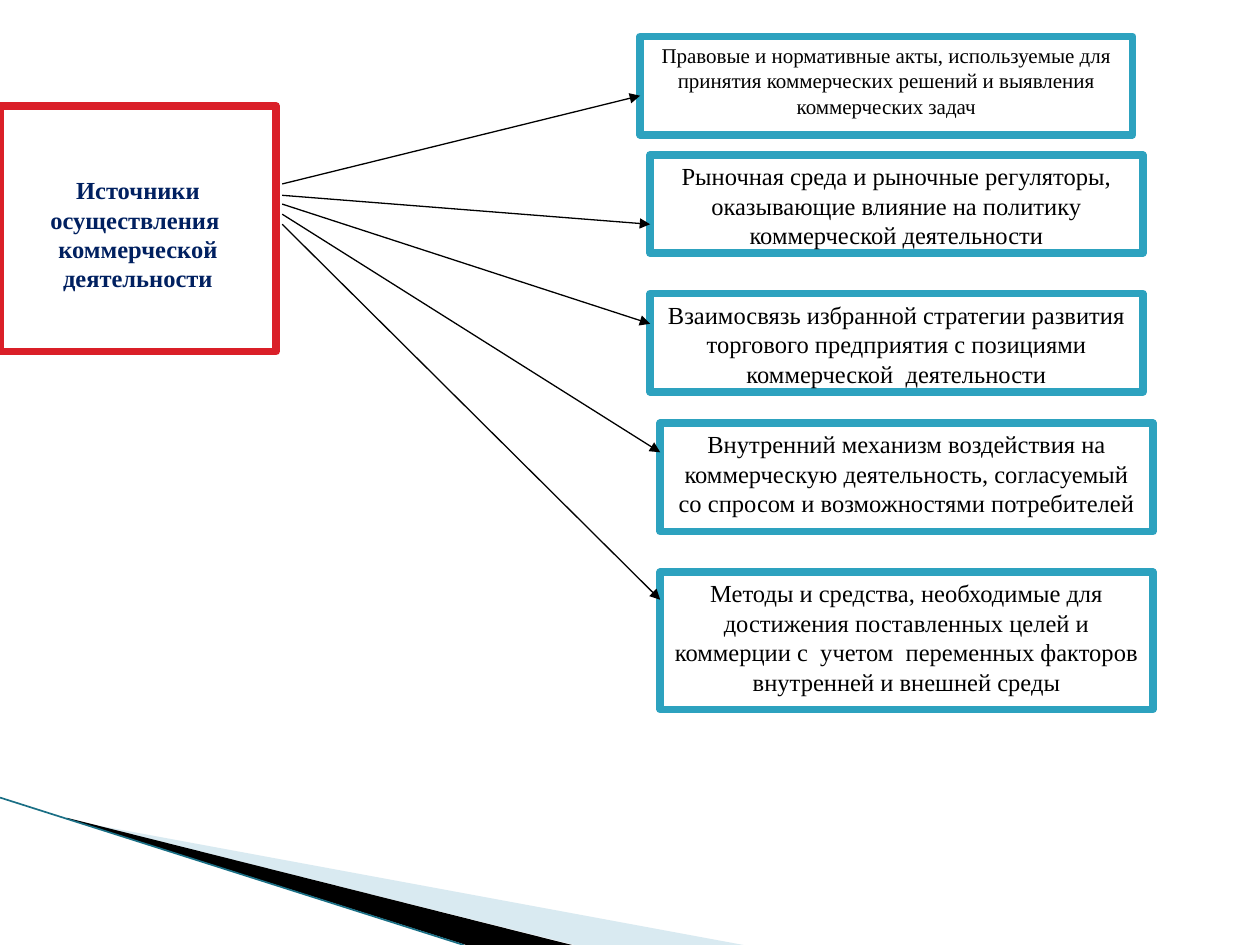
from dataclasses import dataclass
from lxml.etree import SubElement
from pptx import Presentation
from pptx.dml.color import RGBColor
from pptx.enum.shapes import MSO_CONNECTOR, MSO_SHAPE
from pptx.enum.text import MSO_ANCHOR, PP_ALIGN
from pptx.oxml.ns import qn
from pptx.util import Inches, Pt


@dataclass(frozen=True)
class Theme:
    font: str = "Times New Roman"
    paper: str = "FFFFFF"
    ink: str = "000000"
    navy: str = "002060"
    red: str = "DA1F28"
    teal: str = "2DA2BF"
    pale: str = "A0CBDC"
    edge: str = "1A6F85"
    small: int = 12
    base: int = 14
    frame: float = 4.33
    thin: float = 0.75
    rim: float = 0.95


def color(code):
    return RGBColor.from_string(code)


def write(frame, text, *, font, size, ink, bold=False):
    frame.word_wrap = True
    frame.vertical_anchor = MSO_ANCHOR.TOP
    for index, line in enumerate(text.split("\n")):
        para = frame.paragraphs[0] if index == 0 else frame.add_paragraph()
        para.alignment = PP_ALIGN.CENTER
        run = para.add_run()
        run.text = line
        run.font.name = font
        run.font.size = Pt(size)
        run.font.bold = bold
        run.font.color.rgb = color(ink)


class Board:
    cols, rows = 100, 75

    def __init__(self, deck, theme):
        self.theme = theme
        self.wide = deck.slide_width / self.cols
        self.high = deck.slide_height / self.rows
        self.shapes = deck.slides.add_slide(deck.slide_layouts[6]).shapes

    def spot(self, col, row):
        return round(col * self.wide), round(row * self.high)

    def box(self, text, col, row, width, height, line, inset=0.5, **style):
        shape = self.shapes.add_shape(
            MSO_SHAPE.RECTANGLE, *self.spot(col, row), *self.spot(width, height))
        shape.shadow.inherit = False
        shape.fill.solid()
        shape.fill.fore_color.rgb = color(self.theme.paper)
        shape.line.color.rgb = color(line)
        shape.line.width = Pt(self.theme.frame)
        shape.text_frame.margin_top = round(inset * self.high)
        write(shape.text_frame, text, font=self.theme.font, **style)

    def line(self, start, end, ink, width, arrow=False):
        link = self.shapes.add_connector(
            MSO_CONNECTOR.STRAIGHT, *self.spot(*start), *self.spot(*end))
        link.line.color.rgb = color(ink)
        link.line.width = Pt(width)
        if arrow:
            SubElement(link.line._get_or_add_ln(), qn("a:tailEnd"), type="triangle")
        SubElement(link._element.spPr, qn("a:effectLst"))

    def wedge(self, points, fill, alpha=100):
        first, *rest = [self.spot(*point) for point in points]
        pen = self.shapes.build_freeform(*first)
        pen.add_line_segments(rest, close=True)
        shape = pen.convert_to_shape()
        shape.shadow.inherit = False
        shape.line.fill.background()
        shape.fill.solid()
        shape.fill.fore_color.rgb = color(fill)
        if alpha < 100:
            tint = shape.fill._xPr.find(qn("a:solidFill"))[0]
            SubElement(tint, qn("a:alpha"), val=str(alpha * 1000))


def main():
    theme = Theme()
    deck = Presentation()
    deck.slide_width, deck.slide_height = Inches(10), Inches(7.5)
    board = Board(deck, theme)

    board.wedge([(5.5, 65.1), (59, 75), (45.6, 75), (5.5, 65)], theme.pale, 40)
    board.wedge([(5.3, 64.9), (45.4, 75), (37, 75), (5.4, 65)], theme.ink)
    board.line((0, 63.3), (36.8, 75), theme.edge, theme.rim)

    board.box("Источники\nосуществления  коммерческой деятельности",
              0, 8.4, 21.9, 19.5, theme.red, inset=5.5,
              size=theme.base, ink=theme.navy, bold=True)

    sources = [
        ("Правовые и нормативные акты, используемые для принятия "
         "коммерческих решений и выявления коммерческих задач",
         50.8, 2.9, 7.8, theme.small, 14.6, 7.6),
        ("Рыночная среда и рыночные регуляторы, оказывающие влияние "
         "на политику коммерческой деятельности",
         51.6, 12.3, 7.8, theme.base, 15.5, 17.8),
        ("Взаимосвязь избранной стратегии развития торгового предприятия "
         "с позициями коммерческой  деятельности",
         51.6, 23.3, 7.8, theme.base, 16.2, 25.7),
        ("Внутренний механизм воздействия на коммерческую деятельность, "
         "согласуемый со спросом и возможностями потребителей",
         52.4, 33.6, 8.6, theme.base, 17, 35.9),
        ("Методы и средства, необходимые для достижения поставленных целей "
         "и коммерции с  учетом  переменных факторов внутренней и внешней среды",
         52.4, 45.4, 10.9, theme.base, 17.8, 47.6),
    ]
    for text, left, top, height, size, start, tip in sources:
        board.box(text, left, top, 39.1, height, theme.teal, size=size, ink=theme.ink)
        board.line((22.4, start), (left, tip), theme.ink, theme.thin, arrow=True)

    deck.save("out.pptx")


if __name__ == "__main__":
    main()
